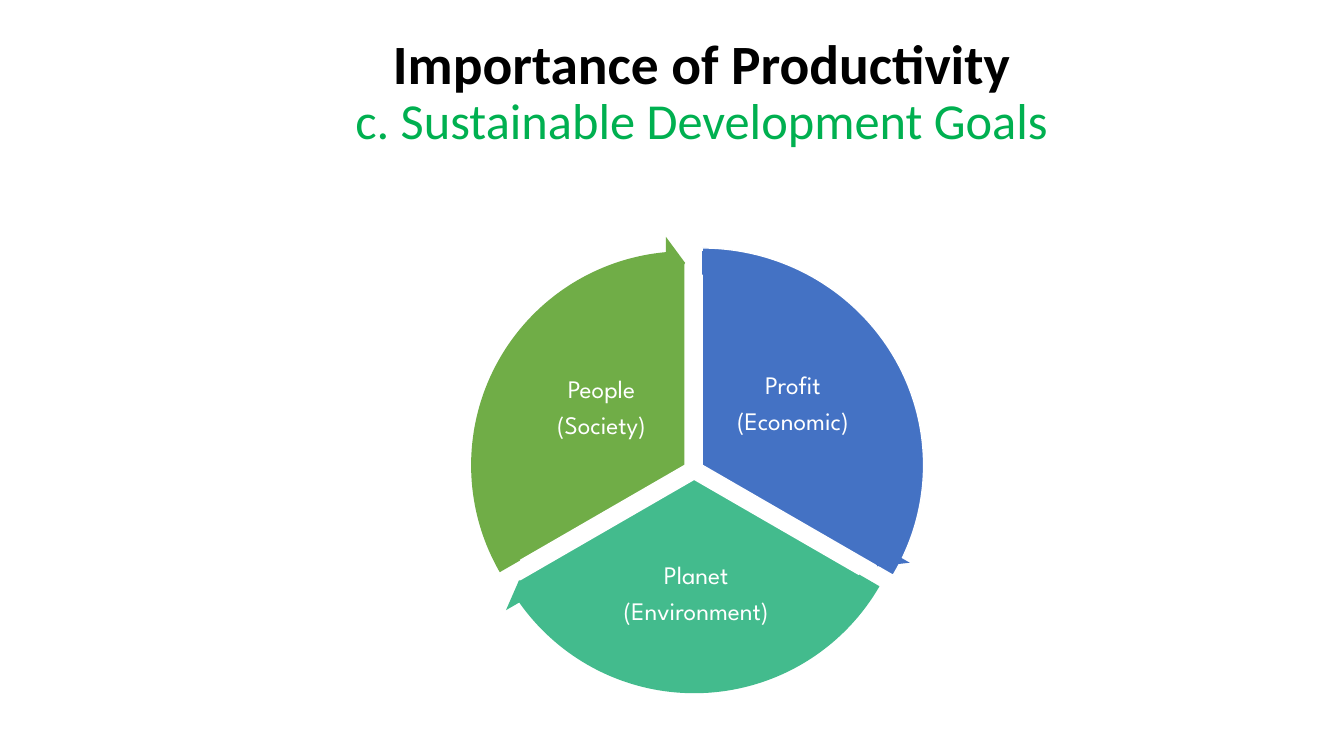
from dataclasses import dataclass

from pptx import Presentation
from pptx.dml.color import RGBColor
from pptx.enum.shapes import MSO_SHAPE
from pptx.enum.text import MSO_ANCHOR, PP_ALIGN
from pptx.util import Inches, Pt

COLORS = {
    "title": "000000",
    "subtitle": "00B050",
    "white": "FFFFFF",
    "profit": "4472C4",
    "planet": "43BB8D",
    "people": "70AD47",
}
DEGREE = 0.6  # one degree in adjustment units
ARROW_SIZE = 4.55
ARROW_BAND, ARROW_HEAD_ANGLE, ARROW_HEAD = 0.051, 3.275, 0.059


@dataclass
class Sector:
    """A third of the cycle; offsets are inches from the cycle's centre."""
    name: str
    aspect: str
    color: str
    offset: tuple
    size: tuple
    angles: tuple
    arrow_angles: tuple
    label_offset: tuple
    label_size: tuple


SECTORS = [
    Sector("Profit", "(Economic)", "profit", (0.08, -0.05), (4.39, 4.31),
           (270, 30), (24.54, 269.99), (0.98, -0.65), (1.57, 1.28)),
    Sector("Planet", "(Environment)", "planet", (0, 0.09), (4.05, 4.05),
           (30, 150), (144.53, 30.01), (0.02, 1.23), (2.17, 1.06)),
    Sector("People", "(Society)", "people", (-0.09, -0.05), (4.05, 4.05),
           (150, 270), (264.55, 150), (-0.92, -0.61), (1.45, 1.2)),
]


def rgb(name):
    return RGBColor.from_string(COLORS[name])


def centred_box(center, offset, size):
    left = center[0] + offset[0] - size[0] / 2
    top = center[1] + offset[1] - size[1] / 2
    return [Inches(length) for length in (left, top, *size)]


def style_paragraph(paragraph, font_name, size, color, bold=False):
    paragraph.alignment = PP_ALIGN.CENTER
    paragraph.line_spacing = 0.9
    font = paragraph.font
    font.name, font.size, font.bold = font_name, Pt(size), bold
    font.color.rgb = rgb(color)


def add_title(slide, left, top, width, height):
    box = slide.shapes.add_textbox(*map(Inches, (left, top, width, height)))
    frame = box.text_frame
    frame.word_wrap = True
    frame.margin_top = 0
    frame.text = "Importance of Productivity\nc. Sustainable Development Goals"
    heading, subtitle = frame.paragraphs
    style_paragraph(heading, "Calibri", 39.6, "title", bold=True)
    style_paragraph(subtitle, "Calibri", 36, "subtitle")


def add_filled_shape(slide, kind, box, color, adjustments):
    shape = slide.shapes.add_shape(kind, *box)
    shape.shadow.inherit = False
    shape.fill.solid()
    shape.fill.fore_color.rgb = rgb(color)
    shape.line.fill.background()
    for index, value in enumerate(adjustments):
        shape.adjustments[index] = value
    return shape


def add_pie(slide, center, sector):
    pie = add_filled_shape(slide, MSO_SHAPE.PIE,
                           centred_box(center, sector.offset, sector.size),
                           sector.color, [angle * DEGREE for angle in sector.angles])
    pie.line.color.rgb = rgb("white")
    pie.line.width = Pt(1)


def add_label(slide, center, sector):
    box = slide.shapes.add_textbox(
        *centred_box(center, sector.label_offset, sector.label_size))
    frame = box.text_frame
    frame.word_wrap = True
    frame.vertical_anchor = MSO_ANCHOR.MIDDLE
    frame.margin_left = frame.margin_right = Inches(0.03)
    frame.margin_top = frame.margin_bottom = Inches(0.03)
    frame.text = f"{sector.name}\n{sector.aspect}"
    for paragraph in frame.paragraphs:
        style_paragraph(paragraph, "League Spartan", 18, "white")
        paragraph.space_after = Pt(6.3)


def add_arrow(slide, center, sector):
    end, start = [angle * DEGREE for angle in sector.arrow_angles]
    add_filled_shape(slide, MSO_SHAPE.CIRCULAR_ARROW,
                     centred_box(center, sector.offset, (ARROW_SIZE, ARROW_SIZE)),
                     sector.color,
                     [ARROW_BAND, ARROW_HEAD_ANGLE, end, start, ARROW_HEAD])


def add_cycle(slide, center):
    for sector in SECTORS:
        add_pie(slide, center, sector)
        add_label(slide, center, sector)
    for sector in SECTORS:
        add_arrow(slide, center, sector)


def main():
    presentation = Presentation()
    presentation.slide_width = Inches(13.33)
    presentation.slide_height = Inches(7.5)
    slide = presentation.slides.add_slide(presentation.slide_layouts[6])
    add_title(slide, 1.21, 0.36, 11.5, 1.65)
    add_cycle(slide, (6.885, 4.665))
    presentation.save("out.pptx")


if __name__ == "__main__":
    main()
